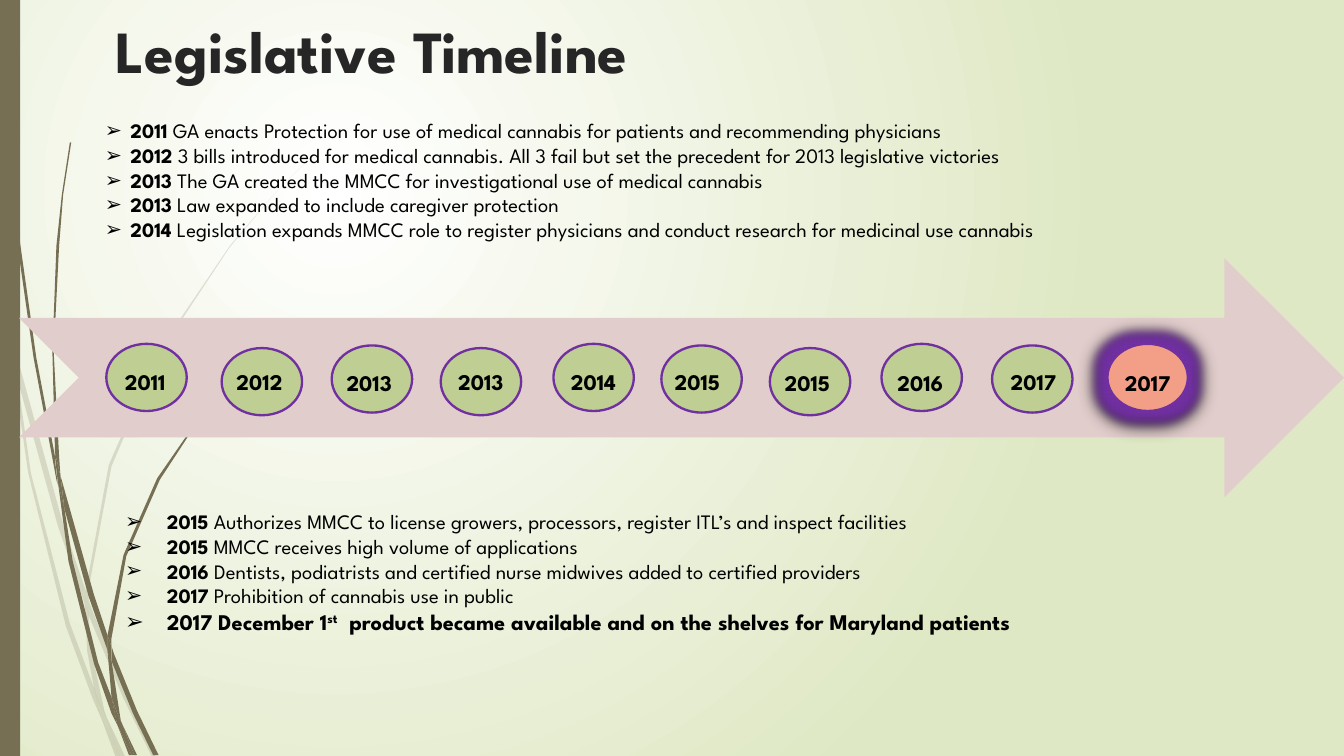
import pptx
import pptx.util
import pptx.oxml
import pptx.dml.color
import pptx.enum.shapes
import pptx.enum.text
from pptx.oxml.ns import nsdecls, qn

Cm = pptx.util.Cm
Pt = pptx.util.Pt
MSO_SHAPE = pptx.enum.shapes.MSO_SHAPE
GRASS_UNIT = Cm(2.54) / 100

PALE_GRASS = [
    [(8, 263), (6, 241), (0, 211), (0, 224), (8, 258)],
    [(43, 391), (63, 449), (64, 440), (47, 390), (11, 259), (13, 282)],
    [(69, 455), (66, 447), (66, 458), (92, 520), (113, 563), (116, 563), (95, 519)],
    [(89, 563), (93, 563), (79, 533)],
    [(70, 512), (52, 464), (23, 352), (13, 282), (8, 263), (21, 352), (49, 466),
     (69, 520), (76, 536), (74, 530)],
    [(63, 449), (65, 485), (70, 512), (72, 519), (79, 533), (78, 530), (68, 484),
     (66, 458), (66, 456)],
    [(66, 438), (83, 347), (120, 261), (171, 184), (201, 148), (217, 131), (234, 115),
     (217, 131), (201, 148), (171, 183), (118, 261), (81, 346), (64, 438), (64, 440),
     (66, 447)],
    [(76, 536), (86, 563), (89, 563)],
    [(66, 456), (66, 458), (66, 447), (64, 440), (63, 449)],
    [(72, 519), (70, 512), (74, 530), (76, 536), (89, 563), (79, 533)],
]
DARK_GRASS = [
    [(5, 82), (12, 175), (25, 266), (42, 357), (43, 361), (41, 343), (41, 340),
     (27, 266), (14, 174), (6, 82), (3, 36), (3, 0), (2, 0), (3, 36)],
    [(66, 444), (80, 484), (80, 475), (80, 473), (70, 443), (45, 354), (48, 379)],
    [(85, 487), (83, 481), (83, 492), (99, 531), (114, 562), (118, 562), (102, 529)],
    [(83, 519), (73, 493), (54, 417), (48, 379), (43, 358), (51, 418), (70, 494),
     (83, 531), (88, 541), (87, 538)],
    [(45, 354), (44, 340), (40, 262), (44, 183), (47, 145), (53, 106), (52, 106),
     (46, 145), (42, 183), (39, 262), (41, 337)],
    [(100, 562), (102, 562), (91, 539)],
    [(43, 358), (48, 379), (45, 354), (41, 337), (41, 340)],
    [(83, 475), (94, 414), (119, 357), (153, 305), (173, 281), (184, 269), (196, 258),
     (195, 258), (184, 269), (173, 280), (153, 304), (117, 356), (92, 413), (80, 473),
     (83, 481)],
    [(88, 541), (96, 562), (98, 562)],
    [(80, 484), (83, 519), (87, 530), (91, 539), (90, 537), (83, 492), (81, 488)],
    [(80, 484), (81, 488), (83, 492), (83, 481), (80, 473), (80, 475)],
    [(87, 530), (83, 519), (87, 538), (88, 541), (98, 562), (100, 562), (91, 539)],
]

EARLY_LAWS = [
    [("2011", {"bold": True}), (" GA enacts Protection for use of medical cannabis for patients and recommending physicians", {})],
    [("2012", {"bold": True}), (" 3 bills introduced for medical cannabis. All 3 fail but set the precedent for 2013 legislative victories", {})],
    [("2013", {"bold": True}), (" The GA created the MMCC for investigational use of medical cannabis", {})],
    [("2013", {"bold": True}), (" Law expanded to include caregiver protection", {})],
    [("2014", {"bold": True}), (" Legislation expands MMCC role to register physicians and conduct research for medicinal use cannabis", {})],
]
LAUNCH = {"bold": True, "size": Pt(12)}
LATER_LAWS = [
    [("2015", {"bold": True}), (" Authorizes MMCC to license growers, processors, register ITL’s and inspect facilities", {})],
    [("2015", {"bold": True}), (" MMCC receives high volume of applications", {})],
    [("2016", {"bold": True}), (" Dentists, podiatrists and certified nurse midwives added to certified providers", {})],
    [("2017", {"bold": True}), (" Prohibition of cannabis use in public", {})],
    [("2017 December 1", LAUNCH), ("st", {**LAUNCH, "baseline": "30000"}),
     ("  product became available and on the shelves for Maryland patients", LAUNCH)],
]
MILESTONES = [
    ("2011", 2.01, 6.5, 2.11, 6.83), ("2012", 4.19, 6.58, 4.22, 6.83),
    ("2013", 6.27, 6.53, 6.3, 6.86), ("2013", 8.33, 6.58, 8.41, 6.83),
    ("2014", 10.46, 6.5, 10.54, 6.83), ("2015", 12.5, 6.53, 12.5, 6.83),
    ("2015", 14.55, 6.58, 14.58, 6.86), ("2016", 16.66, 6.5, 16.71, 6.86),
    ("2017", 18.75, 6.53, 18.85, 6.83), ("2017", 20.93, 6.5, 21.01, 6.86),
]


def rgb(value):
    return pptx.dml.color.RGBColor.from_string(value)


class TimelineSlide:
    font = "League Spartan"
    olive = "766F54"
    purple = "7030A0"

    def __init__(self, prs):
        self.s = prs.slides.add_slide(prs.slide_layouts[3])

    def background(self, inner, outer):
        self.s._element.cSld.insert(0, pptx.oxml.parse_xml(
            f'<p:bg {nsdecls("p", "a")}><p:bgPr><a:gradFill rotWithShape="1"><a:gsLst>'
            f'<a:gs pos="0"><a:srgbClr val="{inner}"/></a:gs>'
            f'<a:gs pos="100000"><a:srgbClr val="{outer}"/></a:gs></a:gsLst>'
            '<a:path path="circle"><a:fillToRect l="50000" t="50000" r="100000" b="100000"/></a:path>'
            '</a:gradFill><a:effectLst/></p:bgPr></p:bg>'))

    def paint(self, sp, fill, line=None):
        sp.shadow.inherit = False
        sp.fill.solid()
        sp.fill.fore_color.rgb = rgb(fill)
        if line:
            sp.line.color.rgb = rgb(line)
            sp.line.width = Pt(1.25)
        else:
            sp.line.fill.background()

    def grass(self, blades, alpha=None):
        group = self.s.shapes.add_group_shape()
        for blade in blades:
            builder = group.shapes.build_freeform(*blade[0], scale=GRASS_UNIT)
            builder.add_line_segments(blade[1:], close=True)
            sp = builder.convert_to_shape()
            self.paint(sp, self.olive)
            if alpha:
                color = sp._element.spPr.find(qn("a:solidFill"))[0]
                color.append(pptx.oxml.parse_xml(f'<a:alpha {nsdecls("a")} val="{alpha * 1000}"/>'))

    def shape(self, kind, box, fill, line=None):
        sp = self.s.shapes.add_shape(kind, *map(Cm, box))
        self.paint(sp, fill, line)
        return sp

    def glow(self, sp):
        effects = sp._element.spPr.find(qn("a:effectLst"))
        for xml in (
            f'<a:glow {nsdecls("a")} rad="139700"><a:srgbClr val="{self.purple}"/></a:glow>',
            f'<a:outerShdw {nsdecls("a")} blurRad="107950" dist="12700" dir="5400000" '
            'rotWithShape="0"><a:srgbClr val="000000"/></a:outerShdw>',
        ):
            effects.append(pptx.oxml.parse_xml(xml))

    def run(self, p, text, color="000000", **formats):
        r = p.add_run()
        r.text = text
        baseline = formats.pop("baseline", None)
        for key, value in {"name": self.font, "size": Pt(11), "bold": False, **formats}.items():
            setattr(r.font, key, value)
        r.font.color.rgb = rgb(color)
        if baseline:
            r._r.get_or_add_rPr().set("baseline", baseline)

    def placeholder(self, index, box, anchor):
        sp = self.s.placeholders[index]
        self.s.shapes._spTree.append(sp._element)
        for key, value in zip(("left", "top", "width", "height"), box):
            setattr(sp, key, Cm(value))
        tf = sp.text_frame
        tf.auto_size = pptx.enum.text.MSO_AUTO_SIZE.NONE
        tf.word_wrap = True
        tf.vertical_anchor = anchor
        return tf

    def title(self, text, box):
        tf = self.placeholder(0, box, pptx.enum.text.MSO_ANCHOR.BOTTOM)
        p = tf.paragraphs[0]
        p.alignment = pptx.enum.text.PP_ALIGN.LEFT
        self.run(p, text, "262626", size=Pt(32), bold=True)

    def bullets(self, index, items, box, indent):
        tf = self.placeholder(index, box, pptx.enum.text.MSO_ANCHOR.TOP)
        for i, item in enumerate(items):
            p = tf.add_paragraph() if i else tf.paragraphs[0]
            p.space_before = Pt(0)
            pPr = p._p.get_or_add_pPr()
            pPr.set("marL", str(Cm(indent)))
            pPr.set("indent", str(-Cm(indent)))
            for xml in (f'<a:buFont {nsdecls("a")} typeface="Arial"/>',
                        f'<a:buChar {nsdecls("a")} char="➢"/>'):
                pPr.append(pptx.oxml.parse_xml(xml))
            for text, formats in item:
                self.run(p, text, **formats)

    def label(self, text, left, top):
        tf = self.s.shapes.add_textbox(Cm(left), Cm(top), Cm(1.5), Cm(0.76)).text_frame
        tf.word_wrap = True
        tf.auto_size = pptx.enum.text.MSO_AUTO_SIZE.SHAPE_TO_FIT_TEXT
        self.run(tf.paragraphs[0], text, size=Pt(12), bold=True)


def main():
    prs = pptx.Presentation()
    prs.slide_width, prs.slide_height = Cm(25.4), Cm(14.29)
    page = TimelineSlide(prs)
    page.background("FFFFFF", "DFE8C4")
    page.grass(PALE_GRASS, alpha=20)
    page.grass(DARK_GRASS)
    page.shape(MSO_SHAPE.RECTANGLE, (0, 0, 0.38, 14.29), page.olive)
    page.title("Legislative Timeline", (1.93, 0.1, 17.2, 1.65))
    page.shape(MSO_SHAPE.NOTCHED_RIGHT_ARROW, (0.36, 4.88, 25.04, 4.52), "E1CDCC")
    for year, left, top, *_ in MILESTONES:
        sp = page.shape(MSO_SHAPE.OVAL, (left, top, 1.52, 1.27), "BFCE92", page.purple)
    sp.fill.fore_color.rgb = rgb("F39E87")
    page.glow(sp)
    page.bullets(1, EARLY_LAWS, (1.73, 2.11, 21.54, 2.62), 0.48)
    page.bullets(2, LATER_LAWS, (2.11, 9.5, 21.54, 2.64), 0.79)
    for year, _, _, left, top in MILESTONES:
        page.label(year, left, top)
    prs.save("out.pptx")


if __name__ == "__main__":
    main()
